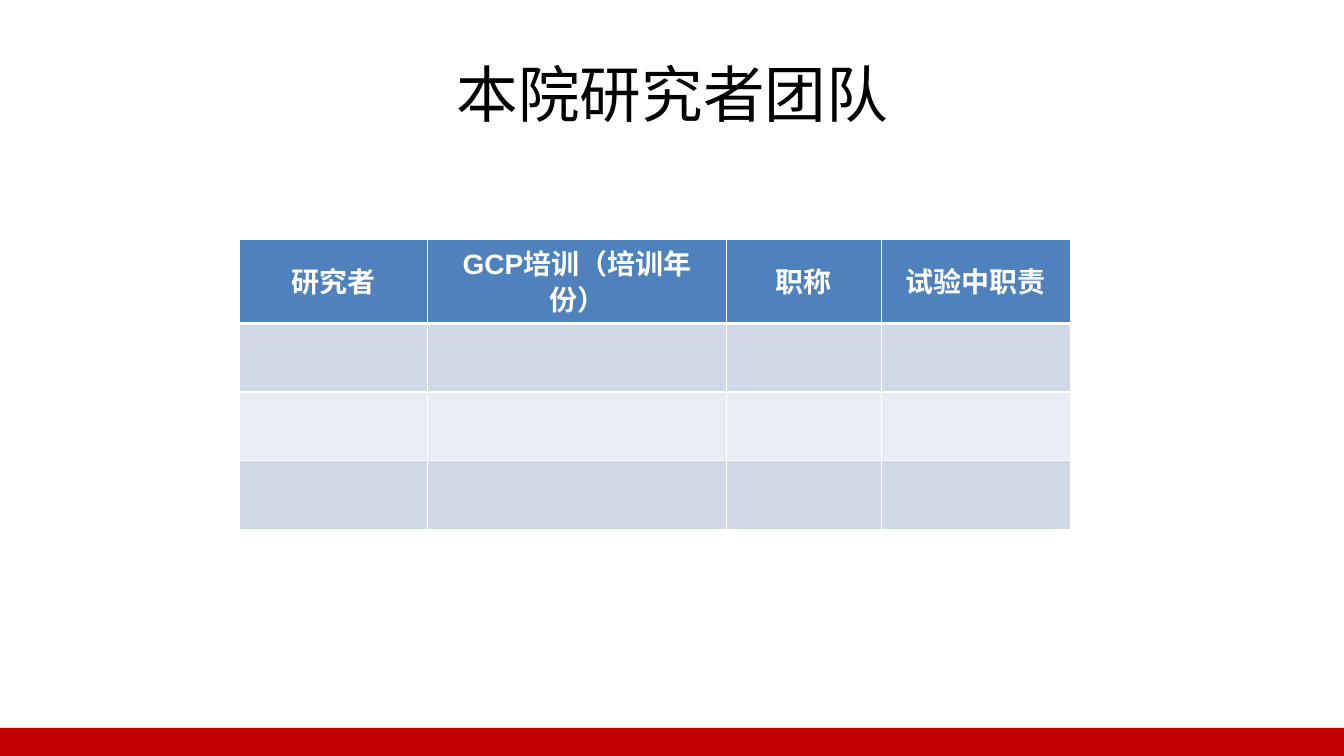
from pptx import Presentation
from pptx.dml.color import RGBColor
from pptx.enum.shapes import MSO_SHAPE as Shape
from pptx.enum.text import MSO_ANCHOR as Anchor, PP_ALIGN as Align
from pptx.oxml.ns import qn
from pptx.util import Inches, Pt
from lxml.etree import SubElement

RED = RGBColor(0xC0, 0x00, 0x00)
BLACK = RGBColor(0x00, 0x00, 0x00)
WHITE = RGBColor(0xFF, 0xFF, 0xFF)
BLUE = RGBColor(0x4F, 0x81, 0xBD)
BANDS = [RGBColor(0xD0, 0xD8, 0xE8), RGBColor(0xE9, 0xED, 0xF4)]

HEADERS = ["研究者", "GCP培训（培训年份）", "职称", "试验中职责"]
WIDTHS = [1.87, 2.97, 1.53, 1.88]
HEIGHTS = [0.83] + [0.68] * 3


def style_text(para, size, latin, color, bold=False):
    para.alignment = Align.CENTER
    for span in para.runs:
        span.font.size = Pt(size)
        span.font.bold = bold
        span.font.color.rgb = color
        span.font.name = latin
        east_asian = SubElement(span.font._element, qn("a:ea"))
        east_asian.set("typeface", "Noto Sans CJK SC")


def add_borders(cell, top_width, bottom_width):
    properties = cell._tc.get_or_add_tcPr()
    widths = {"a:lnL": 1, "a:lnR": 1, "a:lnT": top_width, "a:lnB": bottom_width}
    for position, (side, width) in enumerate(widths.items()):
        line = SubElement(properties, qn(side), w=str(Pt(width)))
        fill = SubElement(line, qn("a:solidFill"))
        SubElement(fill, qn("a:srgbClr"), val=str(WHITE))
        properties.insert(position, line)


deck = Presentation()
deck.slide_width = Inches(13.33)
deck.slide_height = Inches(7.5)
page = deck.slides.add_slide(deck.slide_layouts[6])

# Red footer band
footer = page.shapes.add_shape(
    Shape.RECTANGLE, Inches(-0.03), Inches(7.22), Inches(13.37), Inches(0.31))
footer.shadow.inherit = False
footer.fill.solid()
footer.fill.fore_color.rgb = RED
footer.line.fill.background()

# Title
title = page.shapes.add_textbox(Inches(0.67), Inches(0.3), Inches(12), Inches(1.25))
title.text_frame.word_wrap = True
title.text_frame.vertical_anchor = Anchor.MIDDLE
title.text_frame.text = "本院研究者团队"
style_text(title.text_frame.paragraphs[0], 44, "Noto Sans CJK SC", BLACK)

# Investigator table
table = page.shapes.add_table(
    len(HEIGHTS), len(HEADERS), Inches(2.37), Inches(2.38),
    Inches(sum(WIDTHS)), Inches(sum(HEIGHTS))).table
for column, width in zip(table.columns, WIDTHS):
    column.width = Inches(width)
for index, (row, height) in enumerate(zip(table.rows, HEIGHTS)):
    row.height = Inches(height)
    for cell in row.cells:
        cell.vertical_anchor = Anchor.MIDDLE
        cell.fill.solid()
        cell.fill.fore_color.rgb = BANDS[(index - 1) % 2] if index else BLUE
        add_borders(cell, 3 if index == 1 else 1, 1 if index else 3)

# Header labels
for cell, label in zip(table.rows[0].cells, HEADERS):
    cell.text_frame.text = label
    para = cell.text_frame.paragraphs[0]
    para.line_spacing = 0.9
    para.space_after = Pt(2)
    style_text(para, 20, "Arial", WHITE, bold=True)

deck.save("out.pptx")
